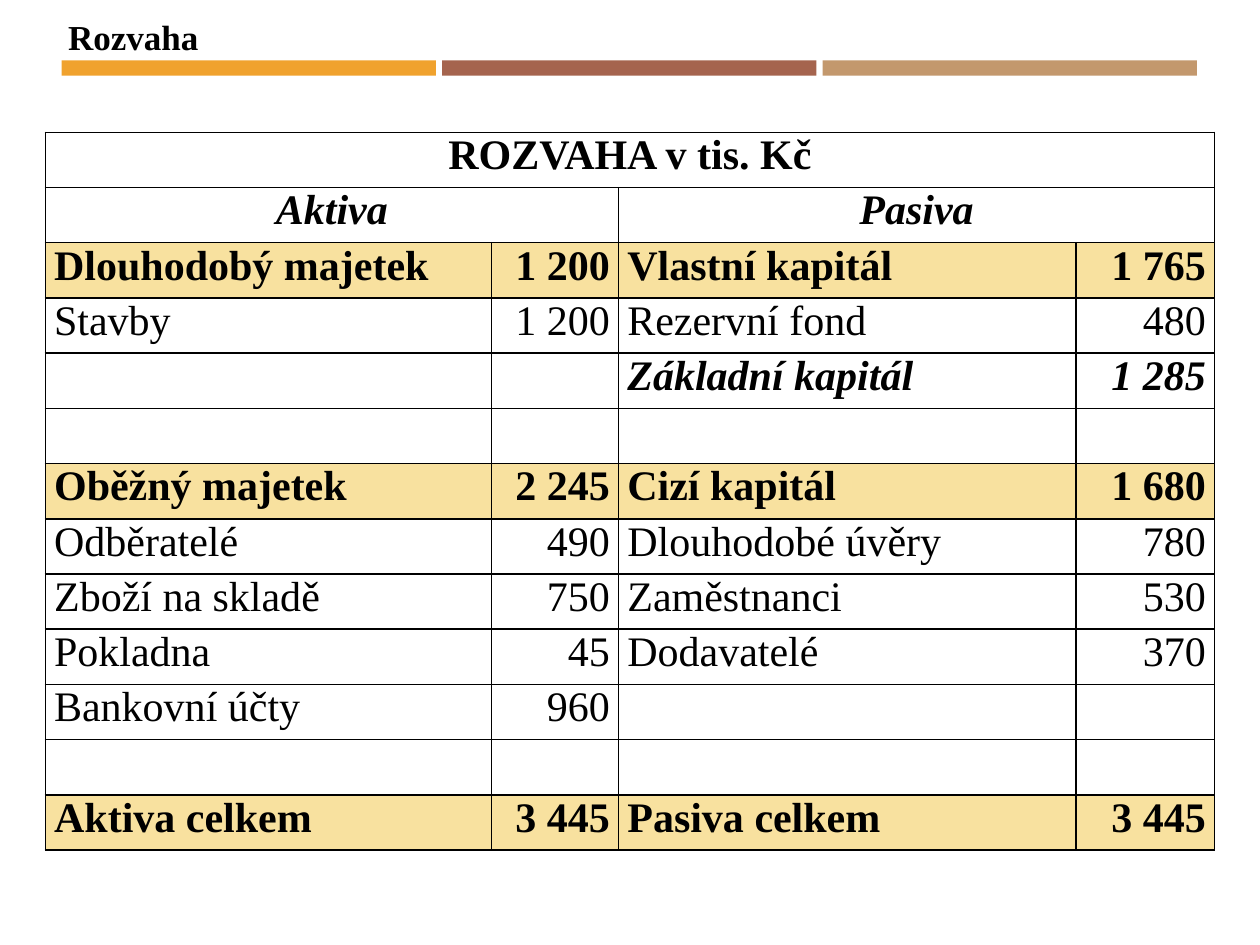
import pptx
import pptx.dml.color
import pptx.enum.shapes
import pptx.enum.text
import pptx.oxml
import pptx.oxml.ns
import pptx.util

Inches = pptx.util.Inches
Pt = pptx.util.Pt
RGBColor = pptx.dml.color.RGBColor
Align = pptx.enum.text.PP_ALIGN

BLACK = RGBColor(0x00, 0x00, 0x00)
GOLD = RGBColor(0xF8, 0xE1, 0x9F)
ORANGE = RGBColor(0xF0, 0xA2, 0x2E)
BROWN = RGBColor(0xA5, 0x64, 0x4E)
TAN = RGBColor(0xC3, 0x98, 0x6D)

FONT = "Times New Roman"
WIDTHS = [3.54, 1.01, 3.63, 1.1]
TOTALS = {2, 6, 12}
HEADS = {0, 1}
CAPITAL = 4
ROWS = [
    ["ROZVAHA v tis. Kč", "", "", ""],
    ["Aktiva", "", "Pasiva", ""],
    ["Dlouhodobý majetek", "1 200", "Vlastní kapitál", "1 765"],
    ["Stavby", "1 200", "Rezervní fond", "480"],
    ["", "", "Základní kapitál", "1 285"],
    ["", "", "", ""],
    ["Oběžný majetek", "2 245", "Cizí kapitál", "1 680"],
    ["Odběratelé", "490", "Dlouhodobé úvěry", "780"],
    ["Zboží na skladě", "750", "Zaměstnanci", "530"],
    ["Pokladna", "45", "Dodavatelé", "370"],
    ["Bankovní účty", "960", "", ""],
    ["", "", "", ""],
    ["Aktiva celkem", "3 445", "Pasiva celkem", "3 445"],
]


def add_run(para, text, size, bold, italic=False):
    """Add one formatted run to a paragraph."""
    run = para.add_run()
    run.text = text
    run.font.name = FONT
    run.font.size = Pt(size)
    run.font.bold = bold
    run.font.italic = italic
    run.font.color.rgb = BLACK


def set_title(slide, text):
    """Place and fill the title placeholder."""
    title = slide.shapes.title
    title.left, title.top = Inches(0.44), Inches(0.07)
    title.width, title.height = Inches(1.25), Inches(0.44)
    frame = title.text_frame
    frame.word_wrap = False
    frame.auto_size = pptx.enum.text.MSO_AUTO_SIZE.SHAPE_TO_FIT_TEXT
    frame.vertical_anchor = pptx.enum.text.MSO_ANCHOR.TOP
    para = frame.paragraphs[0]
    para.alignment = Align.LEFT
    add_run(para, text, 20, True)


def add_bar(slide, left, color):
    """Add one bar of the stripe under the title."""
    bar = slide.shapes.add_shape(
        pptx.enum.shapes.MSO_SHAPE.RECTANGLE,
        Inches(left), Inches(0.48), Inches(2.97), Inches(0.12))
    bar.shadow.inherit = False
    bar.fill.solid()
    bar.fill.fore_color.rgb = color
    bar.line.fill.background()


def add_border(cell):
    """Draw a thin black line on each side of a cell."""
    props = cell._tc.get_or_add_tcPr()
    for side in ("lnL", "lnR", "lnT", "lnB"):
        props.append(pptx.oxml.parse_xml(
            f'<a:{side} {pptx.oxml.ns.nsdecls("a")} w="{Pt(1)}">'
            f'<a:solidFill><a:srgbClr val="{BLACK}"/></a:solidFill></a:{side}>'))


def fill_cell(cell, text, row, col):
    """Format one cell by its place in the sheet."""
    cell.margin_left = cell.margin_right = Inches(0.07)
    cell.margin_top = cell.margin_bottom = 0
    add_border(cell)
    if row in TOTALS:
        cell.fill.solid()
        cell.fill.fore_color.rgb = GOLD
    else:
        cell.fill.background()
    if text:
        para = cell.text_frame.paragraphs[0]
        if row in HEADS:
            para.alignment = Align.CENTER
        else:
            para.alignment = Align.RIGHT if col % 2 else Align.LEFT
        bold = row in TOTALS | HEADS | {CAPITAL}
        add_run(para, text, 24, bold, row in {1, CAPITAL})


def add_sheet(slide):
    """Add the balance sheet table."""
    height = Inches(5.7)
    table = slide.shapes.add_table(
        len(ROWS), len(WIDTHS), Inches(0.36), Inches(1.05),
        Inches(sum(WIDTHS)), height).table
    table.first_row = table.horz_banding = False
    for column, width in zip(table.columns, WIDTHS):
        column.width = Inches(width)
    for line in table.rows:
        line.height = height // len(ROWS)
    for row, texts in enumerate(ROWS):
        for col, text in enumerate(texts):
            fill_cell(table.cell(row, col), text, row, col)
    table.cell(0, 0).merge(table.cell(0, 3))
    for col in (0, 2):
        table.cell(1, col).merge(table.cell(1, col + 1))


def main():
    """Build the slide and save it."""
    deck = pptx.Presentation()
    deck.slide_width, deck.slide_height = Inches(10), Inches(7.5)
    slide = deck.slides.add_slide(deck.slide_layouts[5])
    for index, color in enumerate((ORANGE, BROWN, TAN)):
        add_bar(slide, 0.49 + index * 3.02, color)
    set_title(slide, "Rozvaha")
    add_sheet(slide)
    deck.save("out.pptx")


if __name__ == "__main__":
    main()
